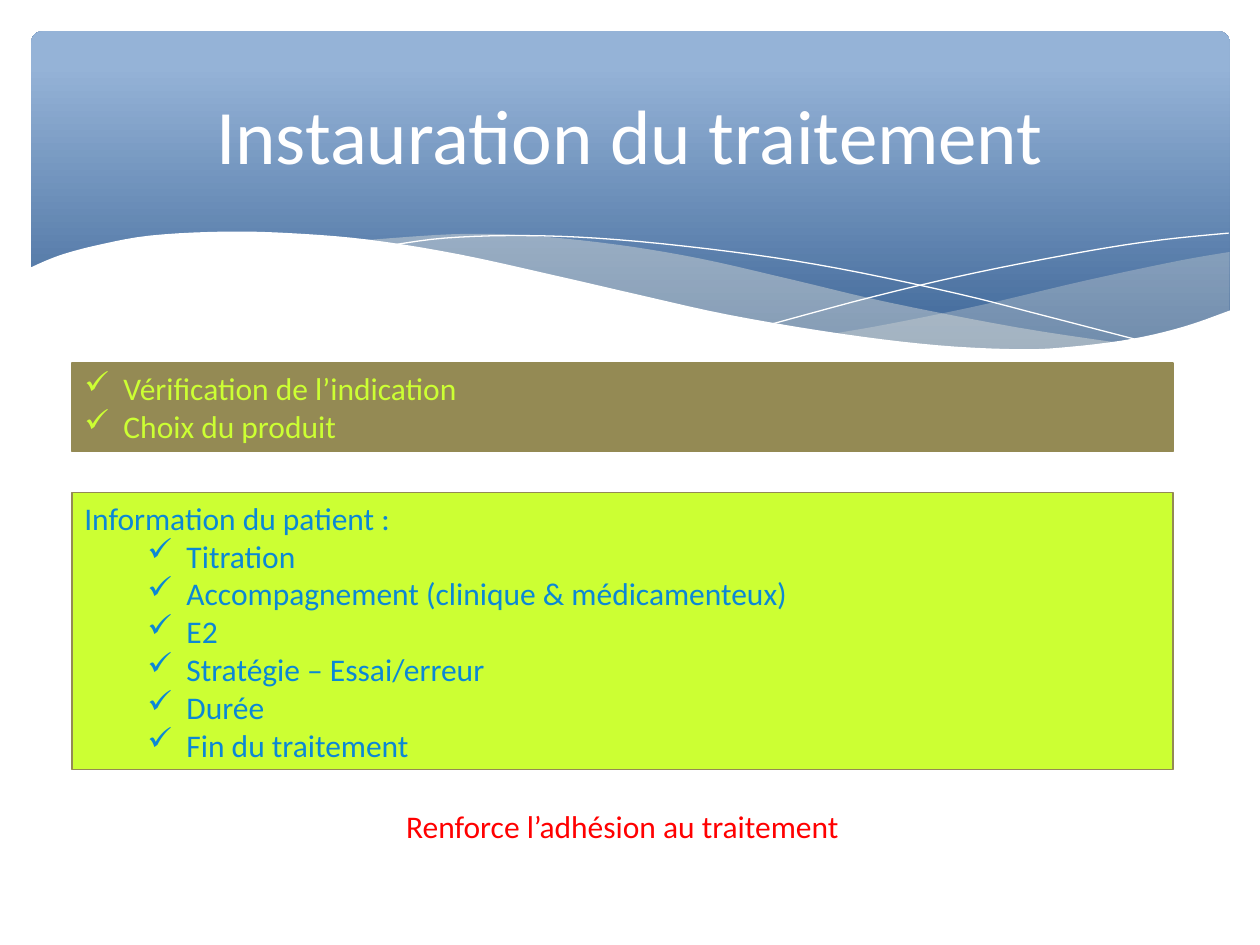
from lxml.etree import SubElement
from pptx import Presentation
from pptx.dml.color import RGBColor
from pptx.enum.shapes import MSO_SHAPE as Shape
from pptx.enum.text import MSO_ANCHOR as Anchor, PP_ALIGN as Align
from pptx.oxml.ns import qn
from pptx.util import Cm, Pt

COLORS = {
    "white": "FFFFFF", "deep": "376092", "sky": "95B3D7", "mist": "EEECE1",
    "olive": "948A54", "lime": "CCFF33", "blue": "0B87D6", "red": "FF0000",
}
FONT = "Calibri"
LEFT, WIDTH = 1.45, 22.2
HANGING = 0.79

RIGHT_WAVE = [
    [(24.79, 5.08), (23.75, 5.26), (21.87, 5.66), (19.79, 6.15), (17.93, 6.53),
     (16.79, 6.73)],
    [(16.79, 6.73), (18.26, 6.91), (19.53, 7.02), (20.68, 7.06), (21.92, 6.99),
     (23.19, 6.78), (24.1, 6.53), (24.79, 6.27)],
]
MIDDLE_WAVE = [
    [(22.68, 6.93), (20.5, 6.6), (17.93, 6.1), (15.98, 5.64), (14.1, 5.21),
     (12.42, 4.93), (10.67, 4.75), (9.17, 4.72), (7.26, 4.85)],
    [(7.26, 4.85), (9.19, 5.16), (11.4, 5.64), (13.46, 6.1), (15.7, 6.55),
     (17.65, 6.86), (19.33, 7.04), (20.78, 7.06), (21.77, 7.04), (22.68, 6.93)],
]
FALLING_LINE = [
    (7.85, 4.95), (8.97, 4.8), (10.57, 4.75), (12.42, 4.83), (14.78, 5.08),
    (16.89, 5.41), (19.3, 5.92), (21.11, 6.38), (23.04, 6.88),
]
RISING_LINE = [
    (15.57, 6.53), (17.65, 5.97), (19.71, 5.49), (22, 5.05), (23.47, 4.83),
    (24.77, 4.7),
]
WHITE_WAVE = [
    [(24.82, 6.25), (23.88, 6.58), (22.83, 6.83), (21.59, 6.99), (20.55, 7.04),
     (18.9, 6.96), (16.97, 6.73), (14.71, 6.35), (12.78, 5.92), (11.35, 5.59),
     (9.27, 5.13), (7.42, 4.83), (5.84, 4.7), (4.5, 4.67), (3.02, 4.75),
     (1.93, 4.95), (1.17, 5.16), (0.58, 5.41)],
    [(0.58, 8.36), (24.82, 8.36)],
]


def rgb(name):
    return RGBColor.from_string(COLORS[name])


def smooth(anchors, steps=5):
    padded = [anchors[0], *anchors, anchors[-1]]
    points = [anchors[0]]
    for a, b, c, d in zip(padded, padded[1:], padded[2:], padded[3:]):
        for step in range(1, steps + 1):
            t = step / steps
            points.append(tuple(
                b[i] + t * (c[i] - a[i]) / 2
                + t ** 2 * (2 * a[i] - 5 * b[i] + 4 * c[i] - d[i]) / 2
                + t ** 3 * (3 * b[i] - a[i] - 3 * c[i] + d[i]) / 2
                for i in (0, 1)))
    return points


def add_curve(page, edges, close):
    points = [(Cm(x), Cm(y)) for edge in edges for x, y in smooth(edge)]
    builder = page.shapes.build_freeform(*points[0])
    builder.add_line_segments(points[1:], close=close)
    curve = builder.convert_to_shape()
    curve.shadow.inherit = False
    return curve


def add_wave(page, edges, color, opacity=100):
    wave = add_curve(page, edges, close=True)
    wave.fill.solid()
    wave.fill.fore_color.rgb = rgb(color)
    wave.line.fill.background()
    if opacity < 100:
        tint = wave.fill._xPr.find(qn("a:solidFill"))[0]
        SubElement(tint, qn("a:alpha"), val=str(opacity * 1000))


def add_curved_line(page, anchors):
    curve = add_curve(page, [anchors], close=False)
    curve.fill.background()
    curve.line.color.rgb = rgb("white")
    curve.line.width = Pt(0.75)


def add_banner(page):
    banner = page.shapes.add_shape(
        Shape.ROUNDED_RECTANGLE, Cm(0.63), Cm(0.63), Cm(24.16), Cm(6.86))
    banner.adjustments[0] = 0.034
    banner.shadow.inherit = False
    banner.line.fill.background()
    banner.fill.gradient()
    banner.fill.gradient_angle = 90
    stops = banner.fill.gradient_stops
    for stop, position, color in zip(stops, (0, 0.9), ("deep", "sky")):
        stop.position = position
        stop.color.rgb = rgb(color)


def add_check(para, color, indent):
    props = para._p.get_or_add_pPr()
    props.set("marL", str(Cm(indent)))
    props.set("indent", str(-Cm(HANGING)))
    bullet_color = SubElement(props, qn("a:buClr"))
    SubElement(bullet_color, qn("a:srgbClr"), val=COLORS[color])
    SubElement(props, qn("a:buChar"), char="✓")


def style_para(para, color, size, align):
    para.alignment = align
    para.font.name = FONT
    para.font.size = Pt(size)
    para.font.color.rgb = rgb(color)


def add_label(page, text, top, height, left, width, color, size):
    box = page.shapes.add_textbox(Cm(left), Cm(top), Cm(width), Cm(height))
    frame = box.text_frame
    frame.word_wrap = True
    frame.vertical_anchor = Anchor.MIDDLE
    frame.text = text
    style_para(frame.paragraphs[0], color, size, Align.CENTER)


def add_panel(page, top, height, fill, color, checks, heading=None):
    panel = page.shapes.add_shape(
        Shape.RECTANGLE, Cm(LEFT), Cm(top), Cm(WIDTH), Cm(height))
    panel.shadow.inherit = False
    panel.fill.solid()
    panel.fill.fore_color.rgb = rgb(fill)
    panel.line.color.rgb = rgb("olive")
    panel.line.width = Pt(0.75)
    frame = panel.text_frame
    frame.vertical_anchor = Anchor.TOP
    lines = [heading, *checks] if heading else checks
    frame.text = "\n".join(lines)
    for para in frame.paragraphs:
        if para.text != heading:
            para.level = 1 if heading else 0
            add_check(para, color, HANGING + 1.27 * para.level)
        style_para(para, color, 18, Align.LEFT)


def main():
    deck = Presentation()
    deck.slide_width, deck.slide_height = Cm(25.4), Cm(19.05)
    page = deck.slides.add_slide(deck.slide_layouts[6])

    add_banner(page)
    add_wave(page, RIGHT_WAVE, "mist", 29)
    add_wave(page, MIDDLE_WAVE, "mist", 40)
    add_curved_line(page, FALLING_LINE)
    add_curved_line(page, RISING_LINE)
    add_wave(page, WHITE_WAVE, "white")

    add_label(page, "Instauration du traitement", 0.95, 3.48, 1.27, 22.86,
              "white", 44)
    add_panel(page, 9.93, 5.59, "lime", "blue",
              ["Titration", "Accompagnement (clinique & médicamenteux)", "E2",
               "Stratégie – Essai/erreur", "Durée", "Fin du traitement"],
              heading="Information du patient :")
    add_panel(page, 7.32, 1.78, "olive", "lime",
              ["Vérification de l’indication", "Choix du produit"])
    add_label(page, "Renforce l’adhésion au traitement", 16.14, 1.03, LEFT,
              WIDTH, "red", 18)
    deck.save("out.pptx")


if __name__ == "__main__":
    main()
